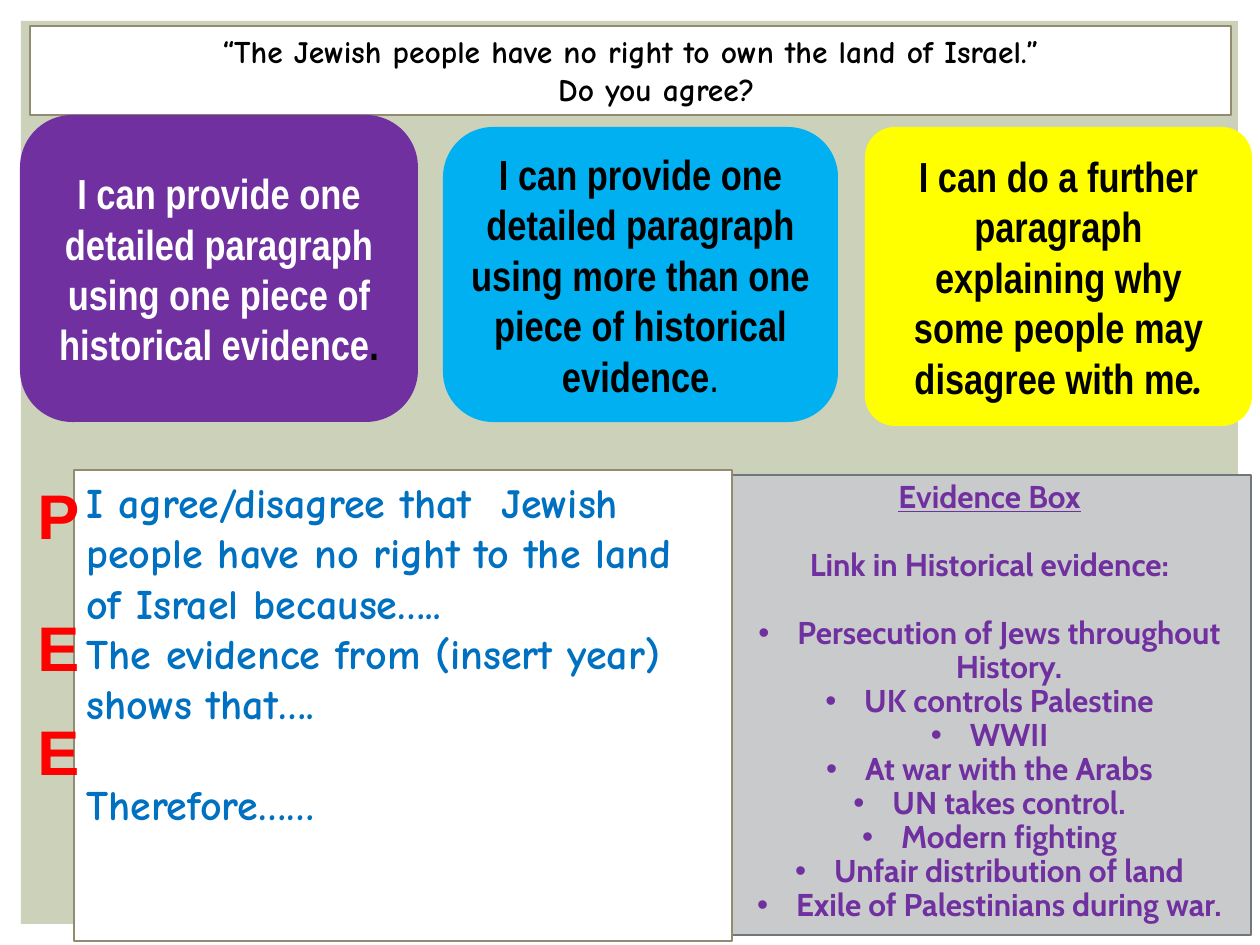
from dataclasses import dataclass
from typing import Optional

import pptx
import pptx.util
import pptx.dml.color
import pptx.enum.shapes
import pptx.enum.text
import pptx.oxml.ns
import lxml.etree

RGBColor = pptx.dml.color.RGBColor
SHAPE = pptx.enum.shapes.MSO_SHAPE
ALIGN = pptx.enum.text.PP_ALIGN
ANCHOR = pptx.enum.text.MSO_ANCHOR

PX = 914400 / 126
BLACK = RGBColor(0x00, 0x00, 0x00)
WHITE = RGBColor(0xFF, 0xFF, 0xFF)
SAGE = RGBColor(0xCC, 0xD1, 0xB9)
OLIVE = RGBColor(0x92, 0x8B, 0x70)
PURPLE = RGBColor(0x70, 0x30, 0xA0)
SKY = RGBColor(0x00, 0xB0, 0xF0)
YELLOW = RGBColor(0xFF, 0xFF, 0x00)
SILVER = RGBColor(0xC8, 0xCA, 0xCC)
SLATE = RGBColor(0x6F, 0x77, 0x7D)
BLUE = RGBColor(0x00, 0x70, 0xC0)
RED = RGBColor(0xFF, 0x00, 0x00)


@dataclass
class Box:
    x: int
    y: int
    w: int
    h: int


@dataclass
class Style:
    font: str
    size: int
    color: RGBColor
    bold: bool = True
    italic: bool = False
    underline: bool = False


@dataclass
class Goal:
    box: Box
    fill: RGBColor
    radius: float
    text: str
    style: Style
    stop: Style


@dataclass
class Para:
    text: str
    style: Style
    before: float = 0
    bullet: bool = False


def emu(px: int) -> int:
    return round(px * PX)


def frame(box: Box) -> tuple:
    return emu(box.x), emu(box.y), emu(box.w), emu(box.h)


def add_panel(slide, kind, box: Box, fill: RGBColor,
              line: Optional[RGBColor] = None, width: float = 1.5):
    s = slide.shapes.add_shape(kind, *frame(box))
    s.shadow.inherit = False
    s.fill.solid()
    s.fill.fore_color.rgb = fill
    if line is None:
        s.line.fill.background()
    else:
        s.line.color.rgb = line
        s.line.width = pptx.util.Pt(width)
    s.text_frame.word_wrap = True
    s.text_frame.vertical_anchor = ANCHOR.TOP
    return s


def add_run(p, text: str, style: Style) -> None:
    r = p.add_run()
    r.text = text
    r.font.name = style.font
    r.font.size = pptx.util.Pt(style.size)
    r.font.color.rgb = style.color
    r.font.bold = style.bold
    r.font.italic = style.italic
    r.font.underline = style.underline


def add_bullet(p, indent: int) -> None:
    pPr = p._p.get_or_add_pPr()
    pPr.set("marL", str(emu(indent)))
    pPr.set("indent", str(-emu(indent)))
    qn = pptx.oxml.ns.qn
    lxml.etree.SubElement(pPr, qn("a:buFont")).set("typeface", "Arial")
    lxml.etree.SubElement(pPr, qn("a:buChar")).set("char", "•")


def write(tf, paras: list[Para], align, spacing: float = 1.0) -> None:
    for i, para in enumerate(paras):
        p = tf.paragraphs[0] if i == 0 else tf.add_paragraph()
        p.alignment = align
        p.line_spacing = spacing
        p.space_before = pptx.util.Pt(para.before)
        if para.bullet:
            add_bullet(p, 39)
        add_run(p, para.text, para.style)


def add_goal(slide, goal: Goal) -> None:
    s = add_panel(slide, SHAPE.ROUNDED_RECTANGLE, goal.box, goal.fill)
    s.adjustments[0] = goal.radius
    s.text_frame.vertical_anchor = ANCHOR.MIDDLE
    p = s.text_frame.paragraphs[0]
    p.alignment = ALIGN.CENTER
    add_run(p, goal.text, goal.style)
    add_run(p, ".", goal.stop)


TITLE = Style("Comic Neue", 18, BLACK)
ANSWER = Style("Comic Neue", 24, BLUE)
EVIDENCE = Style("Cabin", 18, PURPLE)
HEADING = Style("Cabin", 18, PURPLE, underline=True)
LETTER = Style("Arial", 36, RED)
GOAL_WHITE = Style("Arial Narrow", 24, WHITE)
GOAL_BLACK = Style("Arial Narrow", 24, BLACK)

GOALS = [
    Goal(Box(20, 115, 398, 307), PURPLE, 0.17,
         "I can provide one detailed paragraph using one piece of historical evidence",
         GOAL_WHITE, GOAL_BLACK),
    Goal(Box(443, 127, 395, 295), SKY, 0.17,
         "I can provide one detailed paragraph using more than one piece of "
         "historical evidence",
         GOAL_BLACK, Style("Arial Narrow", 24, BLACK, bold=False)),
    Goal(Box(865, 127, 387, 299), YELLOW, 0.1,
         "I can do a further paragraph explaining why some people may disagree with me",
         GOAL_BLACK, Style("Cambria", 24, BLACK, italic=True)),
]
FACTS = [
    "Persecution of Jews throughout History.",
    "UK controls Palestine",
    "WWII",
    "At war with the Arabs",
    "UN takes control.",
    "Modern fighting",
    "Unfair distribution of land",
    "Exile of Palestinians during war.",
]
EVIDENCE_GAP = 19.4
ANSWER_GAP = 28.8


def main() -> None:
    prs = pptx.Presentation()
    prs.slide_width, prs.slide_height = emu(1260), emu(945)
    slide = prs.slides.add_slide(prs.slide_layouts[6])

    # Backdrop and question
    add_panel(slide, SHAPE.RECTANGLE, Box(21, 21, 1217, 903), SAGE)
    s = add_panel(slide, SHAPE.RECTANGLE, Box(30, 26, 1201, 89), WHITE, OLIVE)
    write(s.text_frame, [
        Para("“The Jewish people have no right to own the land of Israel.”", TITLE),
        Para("\tDo you agree? ", TITLE),
    ], ALIGN.CENTER)

    # Learning goals
    for goal in GOALS:
        add_goal(slide, goal)

    # Evidence box
    s = add_panel(slide, SHAPE.RECTANGLE, Box(728, 475, 523, 460), SILVER, SLATE, 0.79)
    paras = [Para("Evidence Box", HEADING),
             Para("Link in Historical evidence:", EVIDENCE, EVIDENCE_GAP)]
    paras += [Para(fact, EVIDENCE, 0 if i else EVIDENCE_GAP, True)
              for i, fact in enumerate(FACTS)]
    write(s.text_frame, paras, ALIGN.CENTER, 0.9)

    # Answer frame
    s = add_panel(slide, SHAPE.RECTANGLE, Box(74, 470, 658, 471), WHITE, OLIVE)
    write(s.text_frame, [
        Para("I agree/disagree that  Jewish people have no right to the land "
             "of Israel because…..", ANSWER),
        Para("The evidence from (insert year) shows that….", ANSWER),
        Para("Therefore……", ANSWER, ANSWER_GAP),
    ], ALIGN.LEFT)

    # Point, evidence, explanation letters
    for letter, y in (("P", 470), ("E", 602), ("E", 706)):
        s = slide.shapes.add_textbox(*frame(Box(25, y, 49, 89)))
        s.text_frame.word_wrap = True
        write(s.text_frame, [Para(letter, LETTER)], ALIGN.LEFT)

    prs.save("out.pptx")


if __name__ == "__main__":
    main()
